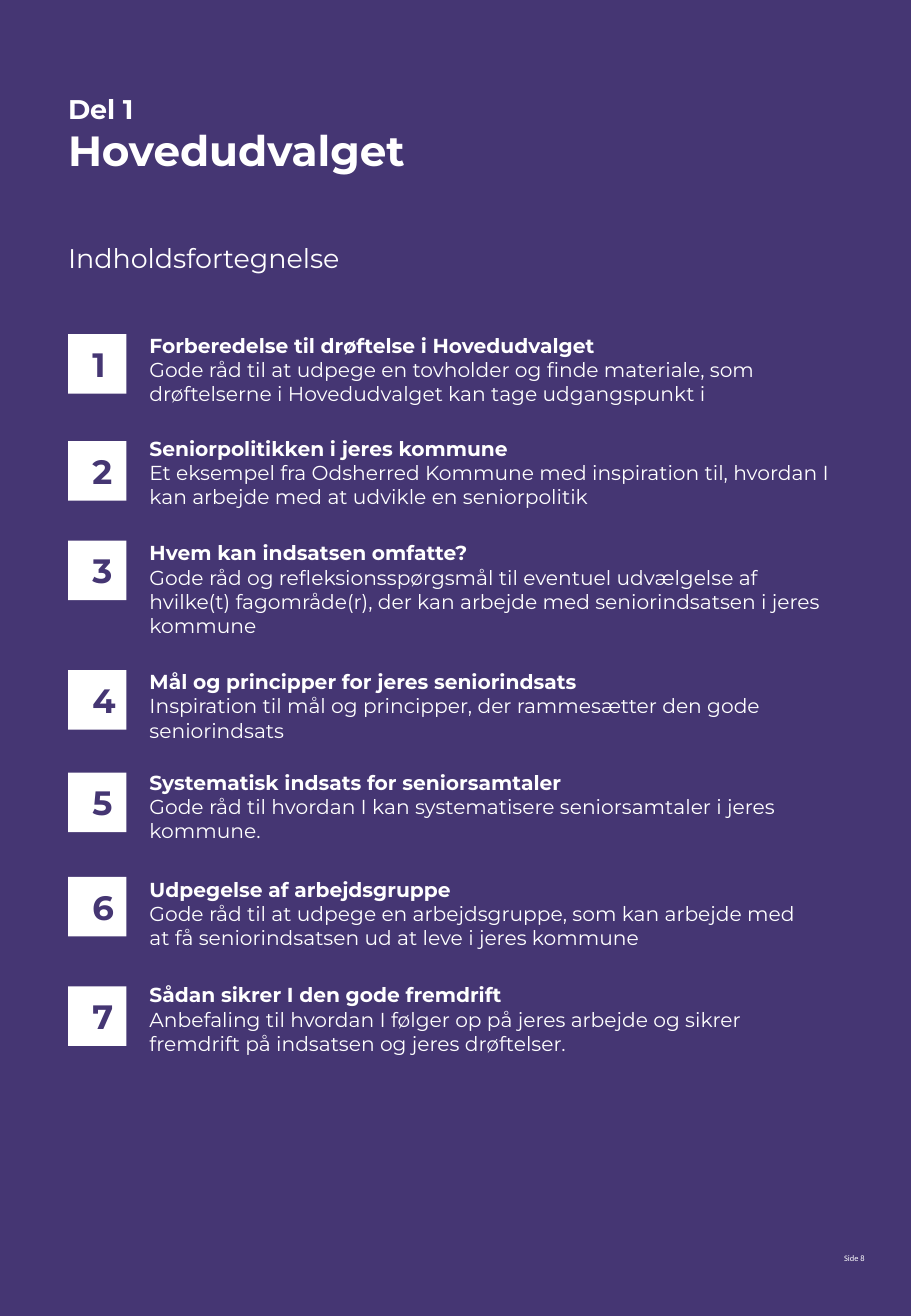
from pptx import Presentation
from pptx.dml.color import RGBColor
from pptx.enum.shapes import MSO_SHAPE
from pptx.enum.text import MSO_ANCHOR, MSO_AUTO_SIZE, PP_ALIGN
from pptx.util import Pt

PURPLE, WHITE = "453673", "FFFFFF"
LEFT, TEXT_LEFT = 40.3, 88.6
SQUARE_W, SQUARE_H = 34.6, 35.3

# Heading, description, top of square, top of text, width and height of text
CONTENTS = [
    ("Forberedelse til drøftelse i Hovedudvalget",
     "Gode råd til at udpege en tovholder og finde materiale, som "
     "drøftelserne i Hovedudvalget kan tage udgangspunkt i",
     198, 197.3, 427, 44),
    ("Seniorpolitikken i jeres kommune",
     "Et eksempel fra Odsherred Kommune med inspiration til, hvordan I "
     "kan arbejde med at udvikle en seniorpolitik",
     261.4, 258.5, 427, 44),
    ("Hvem kan indsatsen omfatte?",
     "Gode råd og refleksionsspørgsmål til eventuel udvælgelse af "
     "hvilke(t) fagområde(r), der kan arbejde med seniorindsatsen i jeres kommune",
     320.4, 320.4, 401.8, 58.5),
    ("Mål og principper for jeres seniorindsats",
     "Inspiration til mål og principper, der rammesætter den gode seniorindsats",
     397.2, 396.7, 390.2, 44),
    ("Systematisk indsats for seniorsamtaler",
     "Gode råd til hvordan I kan systematisere seniorsamtaler i jeres kommune.",
     457.9, 456.5, 390.2, 44),
    ("Udpegelse af arbejdsgruppe",
     "Gode råd til at udpege en arbejdsgruppe, som kan arbejde med "
     "at få seniorindsatsen ud at leve i jeres kommune",
     519.8, 519.8, 390.2, 44),
    ("Sådan sikrer I den gode fremdrift",
     "Anbefaling til hvordan I følger op på jeres arbejde og sikrer "
     "fremdrift på indsatsen og jeres drøftelser.",
     584.6, 582.5, 390.2, 44),
]


def rgb(value):
    return RGBColor.from_string(value)


def set_attrs(obj, values):
    for name, value in values.items():
        setattr(obj, name, value)


def fill_frame(tf, lines, color=WHITE, font="Montserrat", align=PP_ALIGN.LEFT,
               inset=0, anchor=MSO_ANCHOR.TOP, auto_size=MSO_AUTO_SIZE.NONE):
    """Write lines of (text, size, bold), one paragraph each."""
    margins = ("margin_left", "margin_top", "margin_right", "margin_bottom")
    set_attrs(tf, dict.fromkeys(margins, Pt(inset)))
    set_attrs(tf, {"word_wrap": True, "vertical_anchor": anchor,
                   "auto_size": auto_size})
    for i, (text, size, bold) in enumerate(lines):
        p = tf.paragraphs[0] if i == 0 else tf.add_paragraph()
        p.alignment = align
        r = p.add_run()
        r.text = text
        set_attrs(r.font, {"name": font, "size": Pt(size), "bold": bold})
        r.font.color.rgb = rgb(color)


def add_text(s, box, lines, **options):
    sp = s.shapes.add_textbox(*map(Pt, box))
    fill_frame(sp.text_frame, lines, **options)


def add_number_square(s, top, number):
    sp = s.shapes.add_shape(MSO_SHAPE.RECTANGLE,
                            *map(Pt, (LEFT, top, SQUARE_W, SQUARE_H)))
    sp.shadow.inherit = False
    sp.fill.solid()
    sp.fill.fore_color.rgb = rgb(WHITE)
    sp.line.fill.background()
    fill_frame(sp.text_frame, [(str(number), 20, True)], color=PURPLE,
               align=PP_ALIGN.CENTER, inset=14.4, anchor=MSO_ANCHOR.MIDDLE)


def main():
    prs = Presentation()
    set_attrs(prs, {"slide_width": Pt(540), "slide_height": Pt(780)})
    s = prs.slides.add_slide(prs.slide_layouts[6])

    # Background
    s.background.fill.solid()
    s.background.fill.fore_color.rgb = rgb(PURPLE)

    # Title and subtitle
    add_text(s, (LEFT, 54.7, 461.5, 82),
             [("Del 1", 16, True), ("Hovedudvalget", 25, True)])
    add_text(s, (LEFT, 143.3, 360.7, 22.3), [("Indholdsfortegnelse", 16, False)])

    # Numbered contents
    for number, row in enumerate(CONTENTS, 1):
        heading, description, square_top, text_top, width, height = row
        add_number_square(s, square_top, number)
        add_text(s, (TEXT_LEFT, text_top, width, height),
                 [(heading, 12, True), (description, 12, False)],
                 auto_size=MSO_AUTO_SIZE.SHAPE_TO_FIT_TEXT)

    # Page number
    add_text(s, (445, 743, 67.7, 16.6), [("Side 8", 5, False)],
             font="Calibri", align=PP_ALIGN.RIGHT)

    prs.save("out.pptx")


if __name__ == "__main__":
    main()
